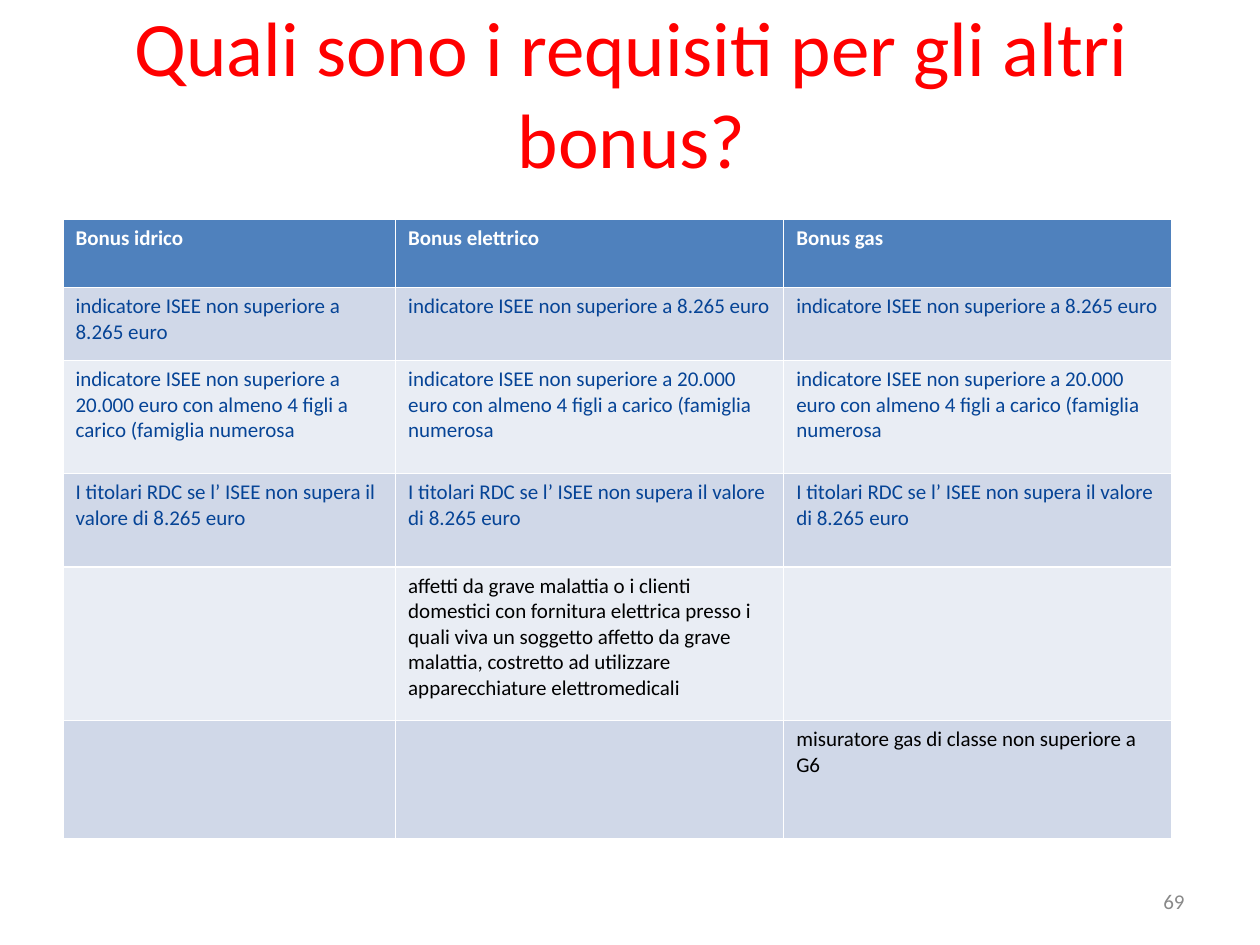
from pptx import Presentation
from pptx.dml.color import RGBColor
from pptx.enum.text import MSO_ANCHOR, PP_ALIGN
from pptx.util import Inches, Pt

MIDDLE = MSO_ANCHOR.MIDDLE
CENTER, RIGHT = PP_ALIGN.CENTER, PP_ALIGN.RIGHT
FONT = "Calibri"
COLORS = {
    "title": "FF0000",
    "header": "4F81BD",
    "header_text": "FFFFFF",
    "odd_row": "D0D8E8",
    "even_row": "E9EDF4",
    "shared_text": "064496",
    "specific_text": "000000",
    "page_number": "898989",
}


def add_span(para, text, size, color, bold=False):
    span = para.add_run()
    span.text = text
    span.font.name = FONT
    span.font.size = Pt(size)
    span.font.bold = bold
    span.font.color.rgb = RGBColor.from_string(COLORS[color])


def add_text_box(page, place, text, size, color, alignment):
    box = page.shapes.add_textbox(*(Inches(length) for length in place))
    frame = box.text_frame
    frame.word_wrap = True
    frame.vertical_anchor = MIDDLE
    para = frame.paragraphs[0]
    para.alignment = alignment
    add_span(para, text, size, color)


deck = Presentation()
deck.slide_width, deck.slide_height = Inches(10), Inches(7.5)
blank_layout = deck.slide_layouts[6]
page = deck.slides.add_slide(blank_layout)

add_text_box(page, (0.5, 0.21, 9.03, 1.04),
             "Quali sono i requisiti per gli altri bonus?", 44, "title", CENTER)

# Requirements shared by all three bonuses fill a whole row.
column_widths = [2.64, 3.08, 3.08]
row_heights = [0.54, 0.58, 0.9, 0.74, 1.22, 0.94]
shared_requirements = [
    "indicatore ISEE non superiore a 8.265 euro",
    "indicatore ISEE non superiore a 20.000 euro con almeno 4 figli a carico (famiglia numerosa",
    "I titolari RDC se l’ ISEE non supera il valore di 8.265 euro",
]
illness_requirement = (
    "affetti da grave malattia o i clienti domestici con fornitura elettrica "
    "presso i quali viva un soggetto affetto da grave malattia, costretto ad "
    "utilizzare apparecchiature elettromedicali"
)
rows = [
    ["Bonus idrico", "Bonus elettrico", "Bonus gas"],
    *([requirement] * 3 for requirement in shared_requirements),
    ["", illness_requirement, ""],
    ["", "", "misuratore gas di classe non superiore a G6"],
]

table = page.shapes.add_table(
    len(rows), len(column_widths), Inches(0.5), Inches(1.74),
    Inches(sum(column_widths)), Inches(sum(row_heights))).table
for column, width in zip(table.columns, column_widths):
    column.width = Inches(width)

for row_index, (texts, height) in enumerate(zip(rows, row_heights)):
    table.rows[row_index].height = Inches(height)
    is_header = row_index == 0
    if is_header:
        fill_color, text_color = "header", "header_text"
    else:
        fill_color = "odd_row" if row_index % 2 else "even_row"
        is_shared = row_index <= len(shared_requirements)
        text_color = "shared_text" if is_shared else "specific_text"
    for column_index, text in enumerate(texts):
        cell = table.cell(row_index, column_index)
        cell.fill.solid()
        cell.fill.fore_color.rgb = RGBColor.from_string(COLORS[fill_color])
        if text:
            add_span(cell.text_frame.paragraphs[0], text, 12, text_color, is_header)

add_text_box(page, (7.17, 6.95, 2.33, 0.4), "69", 12, "page_number", RIGHT)

deck.save("out.pptx")
